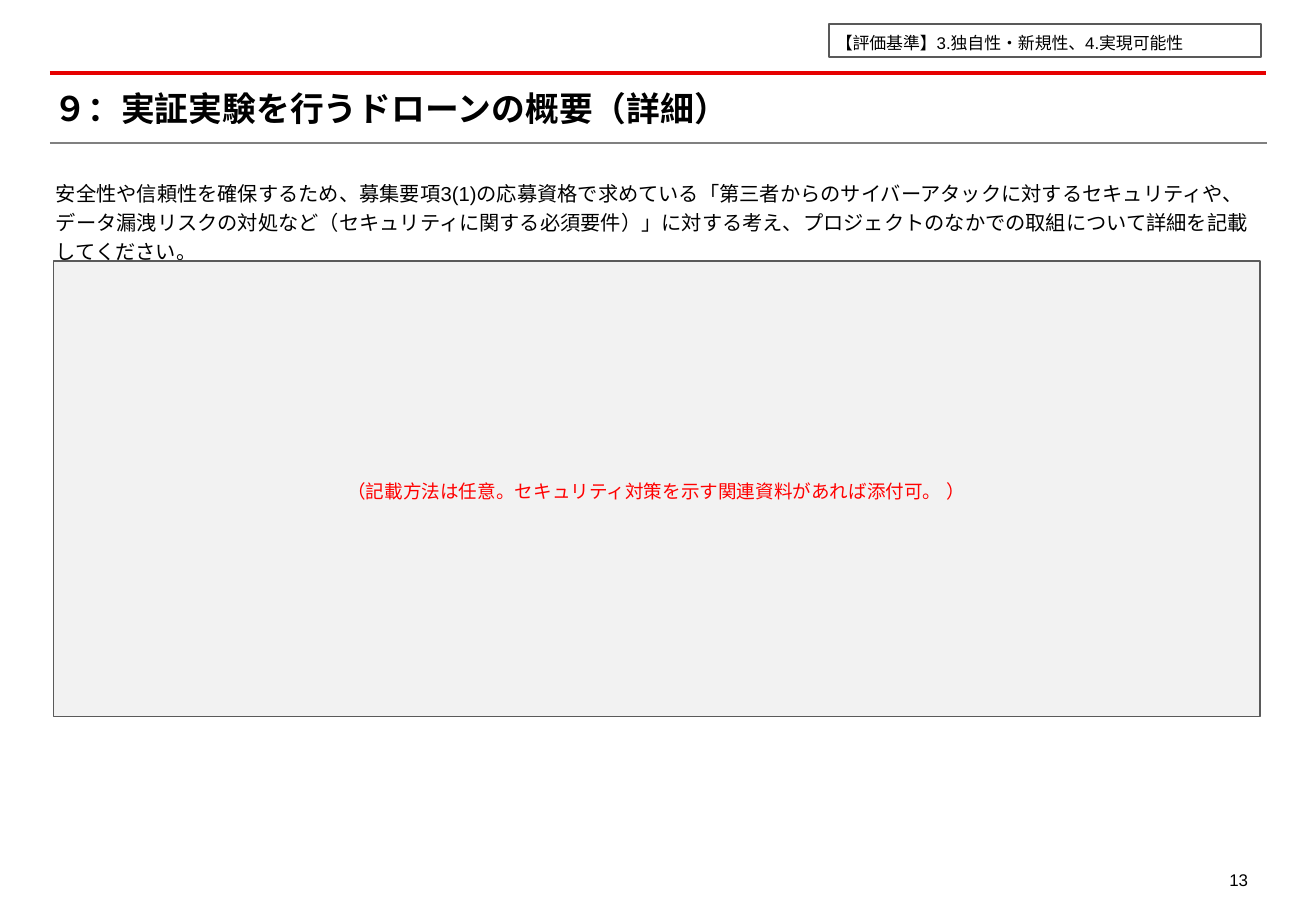
from pptx import Presentation
from pptx.dml.color import RGBColor
from pptx.enum.shapes import MSO_CONNECTOR, MSO_SHAPE
from pptx.enum.text import MSO_ANCHOR, PP_ALIGN
from pptx.oxml.ns import qn
from pptx.util import Pt
from lxml.etree import SubElement

PX = 9144  # 100 px to the inch


def color(code):
    return RGBColor.from_string(code)


def write(box, text, size=10, ink="000000", bold=False, align=PP_ALIGN.LEFT,
          anchor=MSO_ANCHOR.MIDDLE, inset=(0, 0), wrap=True, lead=1.2, before=0):
    """Put one paragraph in a box; inset is (sides, top and bottom)."""
    frame = box.text_frame
    frame.word_wrap = wrap
    frame.vertical_anchor = anchor
    frame.margin_left = frame.margin_right = inset[0] * PX
    frame.margin_top = frame.margin_bottom = inset[1] * PX
    para = frame.paragraphs[0]
    para.alignment = align
    para.line_spacing = lead
    para.space_before = Pt(before)
    run = para.add_run()
    run.text = text
    font = run.font
    font.name, font.size, font.bold = "Arial", Pt(size), bold
    font.color.rgb = color(ink)
    SubElement(font._element, qn("a:ea")).set("typeface", "Arial")


deck = Presentation()
deck.slide_width, deck.slide_height = 1083 * PX, 750 * PX
shapes = deck.slides.add_slide(deck.slide_layouts[6]).shapes

# Rules above and below the title
for right, y, ink, width in [(1042, 60, "E60000", 2), (1043, 118, "808080", 1.25)]:
    rule = shapes.add_connector(MSO_CONNECTOR.STRAIGHT, 41 * PX, y * PX, right * PX, y * PX)
    rule.line.color.rgb = color(ink)
    rule.line.width = Pt(width)
    SubElement(rule._element.spPr, qn("a:effectLst"))

# Title, request and page number
texts = [
    ((44, 72, 991, 34), "９：実証実験を行うドローンの概要（詳細）",
     dict(size=20, bold=True, lead=1.0)),
    ((46, 145, 991, 46),
     "安全性や信頼性を確保するため、募集要項3(1)の応募資格で求めている"
     "「第三者からのサイバーアタックに対するセキュリティや、"
     "データ漏洩リスクの対処など（セキュリティに関する必須要件）」に対する考え、"
     "プロジェクトのなかでの取組について詳細を記載してください。",
     dict(size=12, anchor=MSO_ANCHOR.TOP, before=3.6)),
    ((993, 708, 44, 28), "13",
     dict(align=PP_ALIGN.RIGHT, anchor=MSO_ANCHOR.TOP, inset=(10, 5), wrap=False, before=5)),
]
for place, text, form in texts:
    write(shapes.add_textbox(*[n * PX for n in place]), text, **form)

# Answer area and criteria label
frames = [
    ((44, 215, 993, 375), "F2F2F2", "5A5A5A",
     "（記載方法は任意。セキュリティ対策を示す関連資料があれば添付可。 ）",
     dict(size=11, ink="FF0000", align=PP_ALIGN.CENTER, before=5.5)),
    ((682, 20, 356, 27), None, "595959",
     " 【評価基準】3.独自性・新規性、4.実現可能性", dict(before=5)),
]
for place, fill, edge, text, form in frames:
    box = shapes.add_shape(MSO_SHAPE.RECTANGLE, *[n * PX for n in place])
    box.shadow.inherit = False
    if fill:
        box.fill.solid()
        box.fill.fore_color.rgb = color(fill)
    else:
        box.fill.background()
    box.line.color.rgb = color(edge)
    box.line.width = Pt(1)
    write(box, text, inset=(2, 2), wrap=False, **form)

deck.save("out.pptx")
